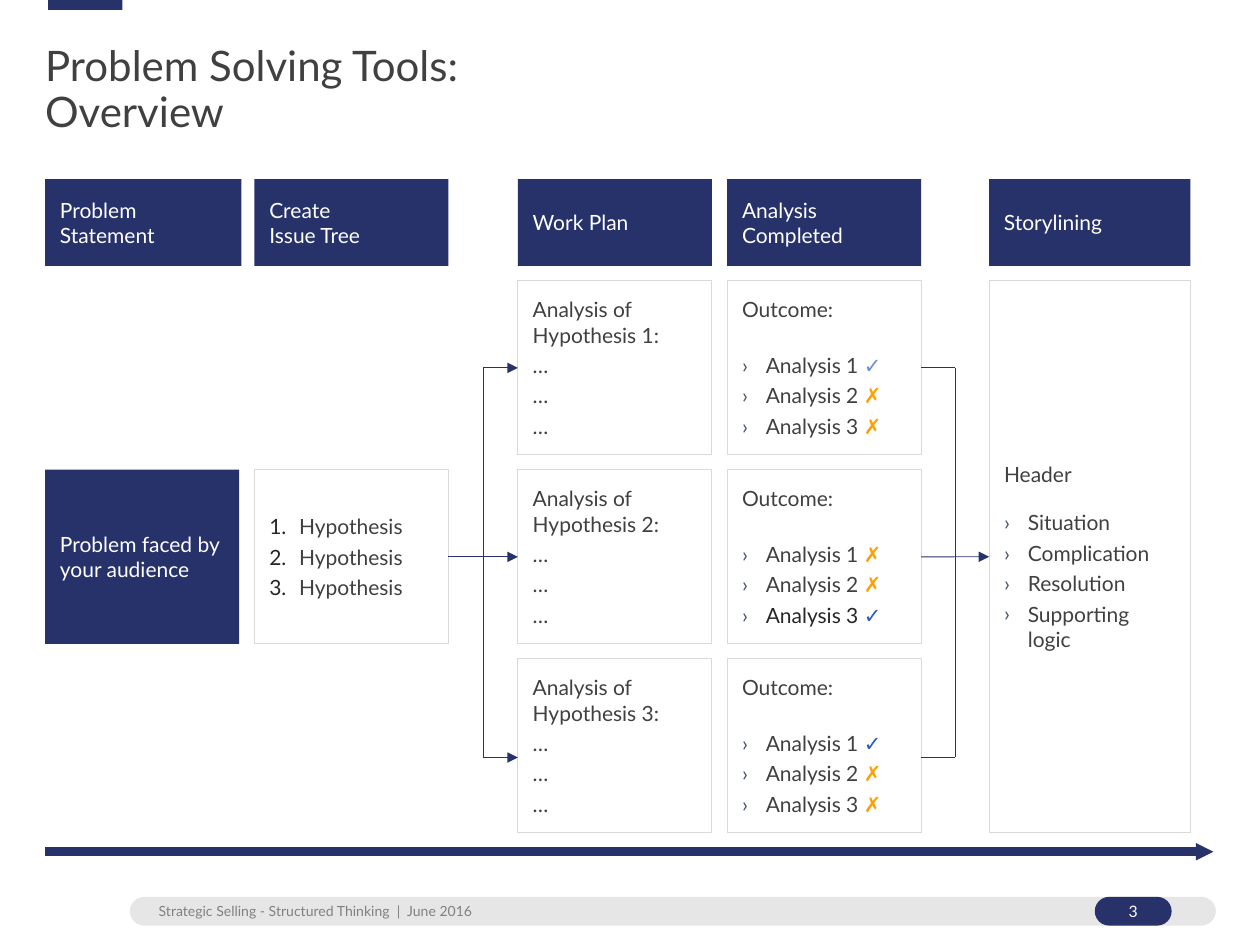
"""Build the problem solving tools overview slide."""
from lxml import etree
from pptx import Presentation
from pptx.dml.color import RGBColor
from pptx.enum import shapes, text
from pptx.oxml import ns
from pptx.util import Cm, Pt

NAVY = RGBColor(0x27, 0x32, 0x6A)
WHITE = RGBColor(0xFF, 0xFF, 0xFF)
INK = RGBColor(0x40, 0x40, 0x40)
DARK = RGBColor(0x26, 0x26, 0x26)
GREY = RGBColor(0x80, 0x80, 0x80)
PALE = RGBColor(0xE7, 0xE6, 0xE6)
BORDER = RGBColor(0xD9, 0xD9, 0xD9)
SLATE = RGBColor(0x44, 0x54, 0x6A)
LIGHT_BLUE = RGBColor(0x6C, 0x8D, 0xDE)
BLUE = RGBColor(0x2C, 0x58, 0xC5)
ORANGE = RGBColor(0xFE, 0xA0, 0x00)

TITLE = "Problem Solving Tools:\vOverview"
FOOTER = "Strategic Selling - Structured Thinking  |  June 2016"
PAGE = "3"
HEADERS = [
    (0.91, 3.96, ["Problem Statement"]),
    (5.13, 3.91, ["Create", "Issue Tree"]),
    (10.44, 3.91, ["Work Plan"]),
    (14.66, 3.91, ["Analysis Completed"]),
    (19.94, 4.06, ["Storylining"]),
]
PROBLEM = "Problem faced by your audience"
HYPOTHESES = ["Hypothesis"] * 3
STORY = ["Situation", "Complication", "Resolution", "Supporting logic"]
PASS, FAIL = ("✓", BLUE), ("✗", ORANGE)
OUTCOMES = [
    [(INK, ("✓", LIGHT_BLUE)), (INK, FAIL), (INK, FAIL)],
    [(INK, FAIL), (INK, FAIL), (DARK, PASS)],
    [(INK, PASS), (INK, FAIL), (INK, FAIL)],
]

LEFTS = [left for left, width, lines in HEADERS]
BOX_WIDTH, BOX_HEIGHT, ROW_TOP, ROW_STEP = 3.91, 3.51, 5.66, 3.81
ROWS = [ROW_TOP + ROW_STEP * row for row in range(3)]
MIDDLES = [ROWS[0] + BOX_HEIGHT / 2, ROWS[1] + BOX_HEIGHT / 2, 15.27]


def write(frame, lines, size=12, color=INK, after=0, before=0, bullet=None,
          bullet_color=SLATE, indent=0.48, align=text.PP_ALIGN.LEFT, spacing=1.0):
    """Append lines, each a string or a list of (string, colour) runs."""
    for line in lines:
        paragraph = frame.paragraphs[0]
        if paragraph.runs:
            paragraph = frame.add_paragraph()
        properties = paragraph._p.get_or_add_pPr()
        hanging = Cm(indent) if bullet else 0
        properties.set("marL", str(hanging))
        properties.set("indent", str(-hanging))
        if bullet:
            tint = etree.SubElement(properties, ns.qn("a:buClr"))
            etree.SubElement(tint, ns.qn("a:srgbClr"), val=str(bullet_color))
            etree.SubElement(properties, ns.qn("a:buFont"), typeface="Lato")
            if bullet == "1.":
                etree.SubElement(properties, ns.qn("a:buAutoNum"), type="arabicPeriod")
            else:
                etree.SubElement(properties, ns.qn("a:buChar"), char=bullet)
        else:
            etree.SubElement(properties, ns.qn("a:buNone"))
        paragraph.alignment = align
        paragraph.line_spacing = spacing
        paragraph.space_before = Pt(before if line is lines[0] else 0)
        paragraph.space_after = Pt(after)
        for index, part in enumerate(line.split("\v") if isinstance(line, str) else line):
            words, tone = (part, color) if isinstance(part, str) else part
            if index and isinstance(line, str):
                paragraph.add_line_break()
            run = paragraph.add_run()
            run.text = words
            run.font.name, run.font.size, run.font.color.rgb = "Lato", Pt(size), tone


def set_frame(frame, margins=(0.3, 0.1, 0.3, 0.1), anchor=text.MSO_ANCHOR.MIDDLE):
    frame.word_wrap = True
    frame.auto_size = text.MSO_AUTO_SIZE.NONE
    frame.vertical_anchor = anchor
    (frame.margin_left, frame.margin_top,
     frame.margin_right, frame.margin_bottom) = map(Cm, margins)


def place(shape, left, top, width, height):
    shape.left, shape.top, shape.width, shape.height = map(Cm, (left, top, width, height))


def paint(shape, fill, border=None):
    shape.fill.solid()
    shape.fill.fore_color.rgb = fill
    if border is None:
        shape.line.fill.background()
    else:
        shape.line.color.rgb = border
        shape.line.width = Pt(0.5)


def add_box(slide, left, top, width, height, fill=WHITE, border=None, rounded=False):
    kind = shapes.MSO_SHAPE.ROUNDED_RECTANGLE if rounded else shapes.MSO_SHAPE.RECTANGLE
    shape = slide.shapes.add_shape(kind, *map(Cm, (left, top, width, height)))
    if rounded:
        shape.adjustments[0] = 0.5
    shape.shadow.inherit = False
    paint(shape, fill, border)
    set_frame(shape.text_frame)
    return shape


def add_line(slide, start, end, width=0.5, head=None, source=None, target=None):
    line = slide.shapes.add_connector(
        shapes.MSO_CONNECTOR.STRAIGHT, *map(Cm, (*start, *end)))
    line.line.color.rgb = NAVY
    line.line.width = Pt(width)
    if head:
        etree.SubElement(line.line._get_or_add_ln(), ns.qn("a:tailEnd"),
                         type="triangle", w=head, len=head)
    etree.SubElement(line._element.spPr, ns.qn("a:effectLst"))
    if source is not None:
        line.begin_connect(source, 3)
    if target is not None:
        line.end_connect(target, 1)


def add_frame_parts(slide):
    add_box(slide, 2.62, 18.08, 21.89, 0.58, PALE, rounded=True)
    pill = add_box(slide, 22.07, 18.08, 1.55, 0.58, NAVY, rounded=True)
    write(pill.text_frame, [PAGE], size=9, color=WHITE, align=text.PP_ALIGN.CENTER)
    footer = slide.shapes.add_textbox(Cm(3.2), Cm(18.19), Cm(9.09), Cm(0.34))
    set_frame(footer.text_frame, (0, 0, 0, 0), text.MSO_ANCHOR.TOP)
    write(footer.text_frame, [FOOTER], size=8, color=GREY)
    add_box(slide, 0.97, 0, 1.5, 0.2, NAVY)
    title = slide.shapes.title
    place(title, 0.91, 0.61, 18.95, 2.57)
    set_frame(title.text_frame, (0, 0, 0.25, 0.13))
    write(title.text_frame, [TITLE], size=24, spacing=0.9)


def main():
    presentation = Presentation()
    presentation.slide_width, presentation.slide_height = Cm(25.4), Cm(19.05)
    slide = presentation.slides.add_slide(presentation.slide_layouts[1])
    add_frame_parts(slide)

    for left, width, lines in HEADERS:
        header = add_box(slide, left, 3.61, width, 1.75, NAVY)
        write(header.text_frame, lines, color=WHITE)
    add_line(slide, (0.91, 17.17), (24.46, 17.17), width=5, head="sm")

    plans, results = [], []
    for number, (top, outcome) in enumerate(zip(ROWS, OUTCOMES), 1):
        plan = add_box(slide, LEFTS[2], top, BOX_WIDTH, BOX_HEIGHT, border=BORDER)
        write(plan.text_frame, [f"Analysis of Hypothesis {number}:"] + ["…"] * 3, after=3)
        plans.append(plan)
        result = add_box(slide, LEFTS[3], top, BOX_WIDTH, BOX_HEIGHT, border=BORDER)
        write(result.text_frame, ["Outcome:"], after=17.4)
        checks = [[(f"Analysis {index} ", tone), mark]
                  for index, (tone, mark) in enumerate(outcome, 1)]
        write(result.text_frame, checks, after=3, bullet="›")
        results.append(result)

    problem = add_box(slide, LEFTS[0], ROWS[1], BOX_WIDTH, BOX_HEIGHT, NAVY)
    write(problem.text_frame, [PROBLEM], color=WHITE)
    tree = add_box(slide, LEFTS[1], ROWS[1], BOX_WIDTH, BOX_HEIGHT, border=BORDER)
    write(tree.text_frame, HYPOTHESES, after=3, bullet="1.", bullet_color=DARK, indent=0.6)

    story = slide.placeholders[1]
    place(story, LEFTS[4], ROW_TOP, HEADERS[4][1], 2 * ROW_STEP + BOX_HEIGHT)
    paint(story, WHITE, BORDER)
    set_frame(story.text_frame)
    write(story.text_frame, ["Header"], after=3)
    write(story.text_frame, STORY, after=3, before=10, bullet="›")

    upper, centre, lower = MIDDLES
    for start, end in ((LEFTS[1] + BOX_WIDTH, LEFTS[2]), (LEFTS[3] + BOX_WIDTH, LEFTS[4])):
        trunk = (start + end) / 2
        add_line(slide, (trunk, upper), (trunk, lower))
        if end == LEFTS[2]:
            add_line(slide, (trunk, upper), (end, upper), head="med", target=plans[0])
            add_line(slide, (start, centre), (end, centre), head="med",
                     source=tree, target=plans[1])
            add_line(slide, (trunk, lower), (end, lower), head="med")
        else:
            add_line(slide, (start, upper), (trunk, upper), source=results[0])
            add_line(slide, (start, centre), (end, centre), head="med",
                     source=results[1], target=story)
            add_line(slide, (start, lower), (trunk, lower))

    presentation.save("out.pptx")


if __name__ == "__main__":
    main()
